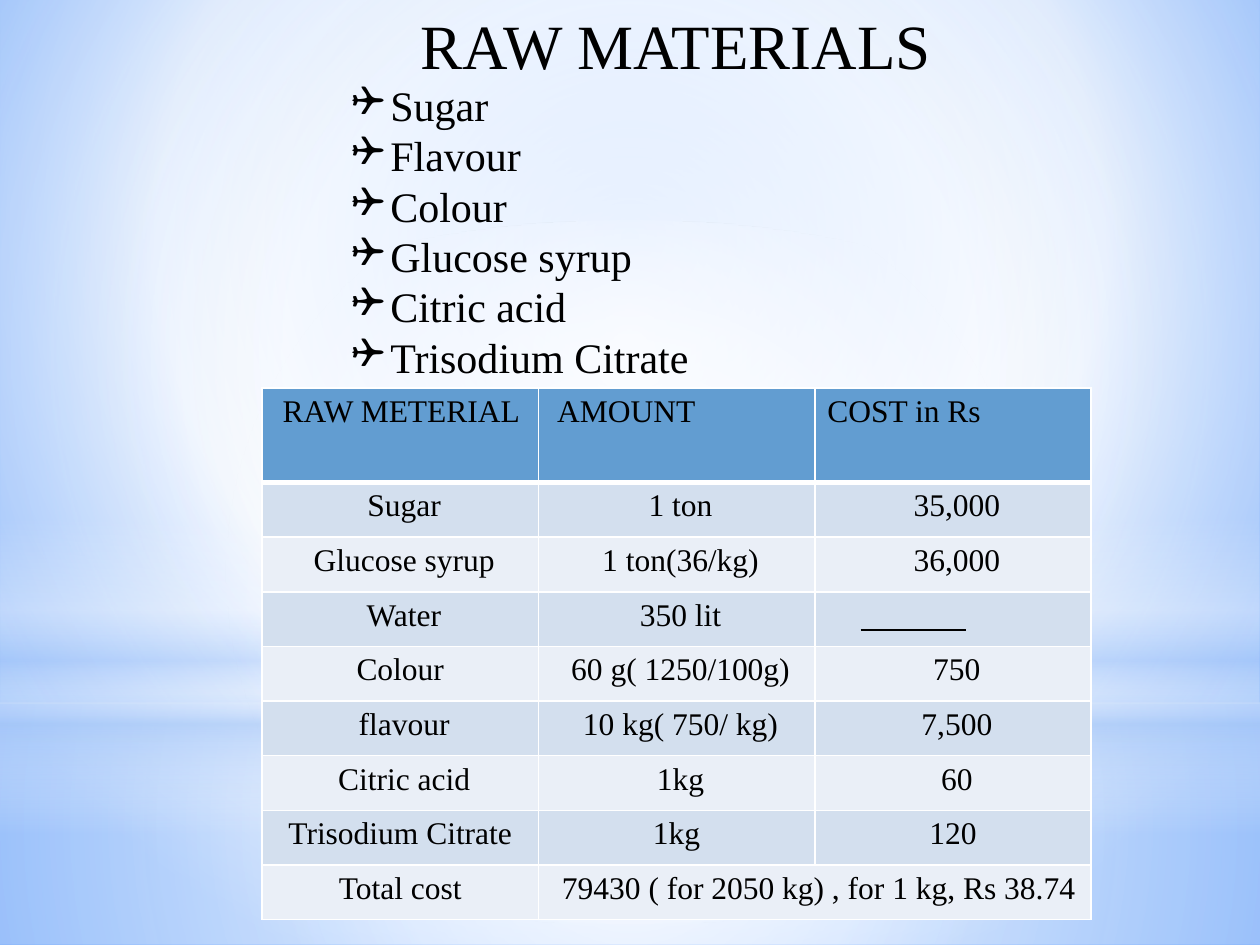
import pptx
import pptx.dml.color
import pptx.enum.shapes
import pptx.enum.text
import pptx.oxml
import pptx.oxml.ns
import pptx.util

Inches = pptx.util.Inches
Pt = pptx.util.Pt
RGBColor = pptx.dml.color.RGBColor
MSO_SHAPE = pptx.enum.shapes.MSO_SHAPE
PP_ALIGN = pptx.enum.text.PP_ALIGN
qn = pptx.oxml.ns.qn

BLACK = RGBColor(0x00, 0x00, 0x00)
WHITE = RGBColor(0xFF, 0xFF, 0xFF)
SKY = RGBColor(0xAC, 0xCB, 0xF9)
LIGHT_BLUE = RGBColor(0x95, 0xC0, 0xFF)
DEEP_BLUE = RGBColor(0x55, 0x99, 0xFF)
HEADER = RGBColor(0x62, 0x9D, 0xD1)
BANDS = (RGBColor(0xD3, 0xDF, 0xEE), RGBColor(0xEA, 0xEF, 0xF7))

CENTER = (50, 50, 50, 50)
INGREDIENTS = ["Sugar", "Flavour", "Colour", "Glucose syrup", "Citric acid", "Trisodium Citrate"]
COSTS = [
    (" RAW METERIAL", " AMOUNT", "COST in Rs"),
    (" Sugar", " 1 ton", " 35,000"),
    (" Glucose syrup", " 1 ton(36/kg)", " 36,000"),
    (" Water", " 350 lit", ""),
    ("Colour", " 60 g( 1250/100g)", " 750"),
    (" flavour", " 10 kg( 750/ kg)", " 7,500"),
    (" Citric acid", " 1kg", " 60"),
    ("Trisodium Citrate", "1kg", "120"),
    ("Total cost", " 79430 ( for 2050 kg) , for 1 kg, Rs 38.74 ", ""),
]


def xml(tag, body, attributes=""):
    return pptx.oxml.parse_xml(
        f'<a:{tag} {pptx.oxml.ns.nsdecls("a")} {attributes}>{body}</a:{tag}>')


def gradient(stops, focus=None):
    marks = "".join(
        f'<a:gs pos="{position * 1000}"><a:srgbClr val="{color}">'
        f'<a:alpha val="{opacity * 1000}"/></a:srgbClr></a:gs>'
        for position, color, opacity in stops)
    if focus:
        sides = " ".join(f'{side}="{value * 1000}"' for side, value in zip("ltrb", focus))
        direction = f'<a:path path="circle"><a:fillToRect {sides}/></a:path>'
    else:
        direction = '<a:lin ang="5400000" scaled="0"/>'
    return xml("gradFill", f"<a:gsLst>{marks}</a:gsLst>{direction}", 'rotWithShape="1"')


class SlideBuilder:
    """Draws styled elements on the current slide."""

    font = "Times New Roman"

    def __init__(self, slide):
        self.slide = slide

    def format_text(self, paragraph, size, align=PP_ALIGN.LEFT):
        paragraph.alignment = align
        for run in paragraph.runs:
            run.font.name = self.font
            run.font.size = Pt(size)
            run.font.bold = False
            run.font.color.rgb = BLACK

    def background(self, stops, focus):
        self.slide.background.fill.solid()
        properties = self.slide.element.find(".//" + qn("p:bgPr"))
        properties.replace(properties.find(qn("a:solidFill")), gradient(stops, focus))

    def glow(self, kind, top, height, stops, focus=None):
        shape = self.slide.shapes.add_shape(kind, 0, Inches(top), Inches(10), Inches(height))
        shape.shadow.inherit = False
        shape.line.fill.background()
        shape.fill.solid()
        properties = shape.element.spPr
        properties.replace(properties.find(qn("a:solidFill")), gradient(stops, focus))

    def text(self, left, top, width, height, lines, size, margin=0.1, bullet=None):
        box = self.slide.shapes.add_textbox(
            Inches(left), Inches(top), Inches(width), Inches(height))
        frame = box.text_frame
        frame.word_wrap = True
        frame.margin_left = Inches(margin)
        frame.text = "\n".join(lines)
        for paragraph in frame.paragraphs:
            self.format_text(paragraph, size)
            if bullet:
                properties = paragraph._p.get_or_add_pPr()
                properties.set("marL", str(Inches(0.31)))
                properties.set("indent", str(Inches(-0.31)))
                properties.append(xml("buFont", "", 'typeface="Wingdings"'))
                properties.append(xml("buChar", "", f'char="{bullet}"'))

    def borders(self, cell, top, bottom):
        properties = cell._tc.get_or_add_tcPr()
        widths = {"lnL": 1, "lnR": 1, "lnT": top, "lnB": bottom}
        for index, (side, width) in enumerate(widths.items()):
            fill = f'<a:solidFill><a:srgbClr val="{WHITE}"/></a:solidFill>'
            properties.insert(index, xml(side, fill, f'w="{Pt(width)}"'))

    def table(self, left, top, width, height, rows, header_height):
        table = self.slide.shapes.add_table(
            len(rows), len(rows[0]), Inches(left), Inches(top),
            Inches(width), Inches(height)).table
        table.first_row = table.horz_banding = False
        body_height = (height - header_height) / (len(rows) - 1)
        for row_index, values in enumerate(rows):
            is_header = row_index == 0
            table.rows[row_index].height = Inches(header_height if is_header else body_height)
            for column_index, value in enumerate(values):
                cell = table.cell(row_index, column_index)
                cell.text_frame.text = value
                self.format_text(cell.text_frame.paragraphs[0], 18,
                                 PP_ALIGN.LEFT if is_header else PP_ALIGN.CENTER)
                cell.fill.solid()
                cell.fill.fore_color.rgb = HEADER if is_header else BANDS[(row_index - 1) % 2]
                self.borders(cell, 3 if row_index == 1 else 1, 3 if is_header else 1)
        last = len(rows) - 1
        table.cell(last, 1).merge(table.cell(last, 2))

    def line(self, x1, y1, x2, y2):
        connector = self.slide.shapes.add_connector(
            pptx.enum.shapes.MSO_CONNECTOR.STRAIGHT,
            Inches(x1), Inches(y1), Inches(x2), Inches(y2))
        connector.line.color.rgb = BLACK
        connector.line.width = Pt(0.75)
        connector.element.spPr.append(xml("effectLst", ""))


def main():
    presentation = pptx.Presentation()
    presentation.slide_width = Inches(10)
    presentation.slide_height = Inches(7.5)
    builder = SlideBuilder(presentation.slides.add_slide(presentation.slide_layouts[6]))

    builder.background([(0, LIGHT_BLUE, 100), (60, WHITE, 100), (100, DEEP_BLUE, 100)],
                       (20, 10, 20, 60))
    builder.glow(MSO_SHAPE.RECTANGLE, 5.58, 1.92,
                 [(0, WHITE, 91), (37, WHITE, 76), (100, SKY, 79)], CENTER)
    builder.glow(MSO_SHAPE.RECTANGLE, 0, 5.58,
                 [(0, WHITE, 89), (48, WHITE, 62), (100, SKY, 79)], CENTER)
    builder.glow(MSO_SHAPE.RECTANGLE, 4.12, 2.5,
                 [(0, WHITE, 0), (29, WHITE, 30), (45, SKY, 40),
                  (55, WHITE, 26), (65, SKY, 60), (100, WHITE, 0)])
    builder.glow(MSO_SHAPE.OVAL, 1.75, 5.58, [(0, WHITE, 100), (56, WHITE, 0)], CENTER)

    builder.text(2.5, 0, 6, 0.71, ["RAW MATERIALS"], 36, margin=0.84)
    builder.text(2.69, 0.58, 5, 3.33, INGREDIENTS, 24, bullet="❑")
    builder.table(2.08, 3.08, 6.58, 4.22, COSTS, 0.75)
    builder.line(6.83, 5, 7.67, 5)
    presentation.save("out.pptx")


if __name__ == "__main__":
    main()
